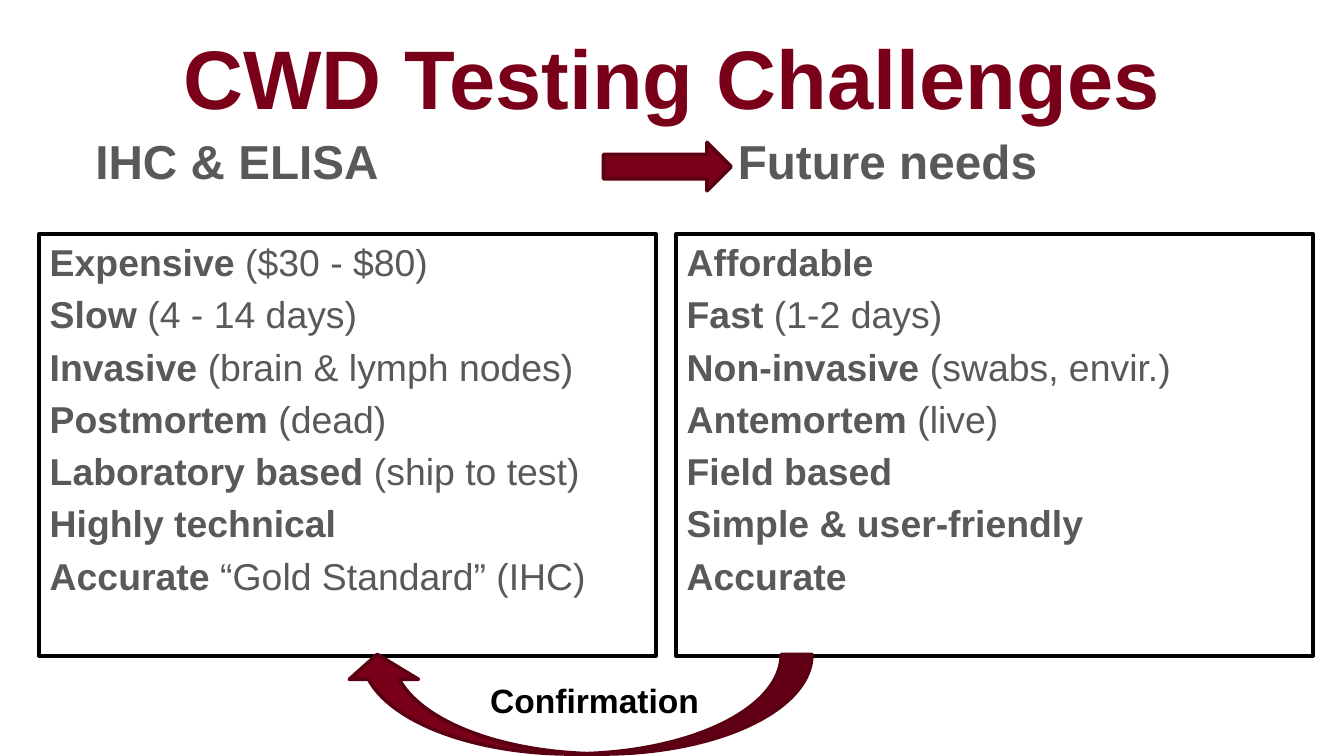
from dataclasses import dataclass

from pptx import Presentation
from pptx.dml.color import RGBColor
from pptx.enum.shapes import MSO_SHAPE
from pptx.enum.text import MSO_ANCHOR, MSO_AUTO_SIZE, PP_ALIGN
from pptx.util import Inches, Pt

RECTANGLE = MSO_SHAPE.RECTANGLE
RIGHT_ARROW = MSO_SHAPE.RIGHT_ARROW
CURVED_ARROW = MSO_SHAPE.CURVED_LEFT_ARROW
LEFT, CENTER = PP_ALIGN.LEFT, PP_ALIGN.CENTER
TOP, MIDDLE, BOTTOM = MSO_ANCHOR.TOP, MSO_ANCHOR.MIDDLE, MSO_ANCHOR.BOTTOM
NO_AUTOFIT = MSO_AUTO_SIZE.NONE
SLIDE_WIDTH = 10
SLIDE_HEIGHT = SLIDE_WIDTH * 9 / 16


@dataclass(frozen=True)
class Theme:
    """Colours, font and type sizes of the slide."""
    maroon: RGBColor = RGBColor(0x7A, 0x00, 0x19)
    dark_maroon: RGBColor = RGBColor(0x5A, 0x00, 0x12)
    gray: RGBColor = RGBColor(0x59, 0x59, 0x59)
    black: RGBColor = RGBColor(0, 0, 0)
    white: RGBColor = RGBColor(0xFF, 0xFF, 0xFF)
    font: str = "Arial"
    title: float = 44.5
    heading: float = 25.5
    body: float = 20
    label: float = 18
    outline: float = 2
    item_gap: float = 4


THEME = Theme()

CURRENT_TESTS = [
    ("Expensive", " ($30 - $80)"),
    ("Slow", " (4 - 14 days)"),
    ("Invasive", " (brain & lymph nodes)"),
    ("Postmortem", " (dead)"),
    ("Laboratory based", " (ship to test)"),
    ("Highly technical", ""),
    ("Accurate", " “Gold Standard” (IHC)"),
]
FUTURE_NEEDS = [
    ("Affordable", ""),
    ("Fast", " (1-2 days)"),
    ("Non-invasive", " (swabs, envir.)"),
    ("Antemortem", " (live)"),
    ("Field based", ""),
    ("Simple & user-friendly", ""),
    ("Accurate", ""),
]


def box(left, top, width, height):
    """Return a box in inches as slide lengths."""
    return tuple(Inches(length) for length in (left, top, width, height))


def set_frame(frame, anchor, wrap=True):
    """Set the anchor, margins and wrapping of a text frame."""
    frame.auto_size = NO_AUTOFIT
    frame.word_wrap = wrap
    frame.vertical_anchor = anchor
    frame.margin_left = frame.margin_right = Inches(0.08)
    frame.margin_top = frame.margin_bottom = Inches(0.04)


def add_run(paragraph, text, size, color, bold=True):
    """Add one formatted run to a paragraph."""
    run = paragraph.add_run()
    run.text = text
    run.font.name = THEME.font
    run.font.size = Pt(size)
    run.font.bold = bold
    run.font.color.rgb = color


def place_title(slide, area, text):
    """Move and format the title placeholder."""
    title = slide.shapes.title
    title.left, title.top, title.width, title.height = area
    set_frame(title.text_frame, MIDDLE)
    paragraph = title.text_frame.paragraphs[0]
    paragraph.alignment = CENTER
    add_run(paragraph, text, THEME.title, THEME.maroon)


def add_caption(slide, area, text, size, color, align, anchor, wrap=True):
    """Add a single bold line of text."""
    caption = slide.shapes.add_textbox(*area).text_frame
    set_frame(caption, anchor, wrap)
    paragraph = caption.paragraphs[0]
    paragraph.alignment = align
    add_run(paragraph, text, size, color)


def add_outlined(slide, kind, area, fill, line):
    """Add a flat shape with the common outline width."""
    shape = slide.shapes.add_shape(kind, *area)
    shape.shadow.inherit = False
    shape.fill.solid()
    shape.fill.fore_color.rgb = fill
    shape.line.color.rgb = line
    shape.line.width = Pt(THEME.outline)
    return shape


def add_panel(slide, area, items):
    """Add a framed list of traits with their details."""
    panel = add_outlined(slide, RECTANGLE, area, THEME.white, THEME.black)
    frame = panel.text_frame
    set_frame(frame, TOP)
    for index, (trait, detail) in enumerate(items):
        paragraph = frame.add_paragraph() if index else frame.paragraphs[0]
        paragraph.alignment = LEFT
        if index:
            paragraph.space_before = Pt(THEME.item_gap)
        add_run(paragraph, trait, THEME.body, THEME.gray)
        if detail:
            add_run(paragraph, detail, THEME.body, THEME.gray, bold=False)


def add_column(slide, left, width, heading_left, heading, items):
    """Add a heading with its panel below."""
    add_caption(slide, box(heading_left, 1.02, 3.6, 0.43), heading,
                THEME.heading, THEME.gray, LEFT, BOTTOM)
    add_panel(slide, box(left, 1.74, width, 3.14), items)


def add_confirmation(slide, left, top, width, height):
    """Add the return arrow and its label inside the given box."""
    arrow_area = box(left + (width - height) / 2, top + (height - width) / 2,
                     height, width)
    arrow = add_outlined(slide, CURVED_ARROW, arrow_area,
                         THEME.maroon, THEME.dark_maroon)
    arrow.rotation = 90
    for index, value in enumerate((0.306, 0.693, 0.25)):
        arrow.adjustments[index] = value
    add_caption(slide, box(left + 0.98, top + 0.14, 1.79, 0.4), "Confirmation",
                THEME.label, THEME.black, CENTER, MIDDLE, wrap=False)


def main():
    """Build and save the slide."""
    deck = Presentation()
    deck.slide_width = Inches(SLIDE_WIDTH)
    deck.slide_height = Inches(SLIDE_HEIGHT)
    slide = deck.slides.add_slide(deck.slide_layouts.get_by_name("Title Only"))
    place_title(slide, box(0.69, 0.14, 8.62, 0.86), "CWD Testing Challenges")
    add_column(slide, 0.29, 4.59, 0.63, "IHC & ELISA", CURRENT_TESTS)
    add_column(slide, 5.03, 4.74, 5.41, "Future needs", FUTURE_NEEDS)
    add_outlined(slide, RIGHT_ARROW, box(4.49, 1.06, 0.95, 0.36),
                 THEME.maroon, THEME.dark_maroon)
    add_confirmation(slide, 2.55, 4.87, 3.49, 0.74)
    deck.save("out.pptx")


if __name__ == "__main__":
    main()
